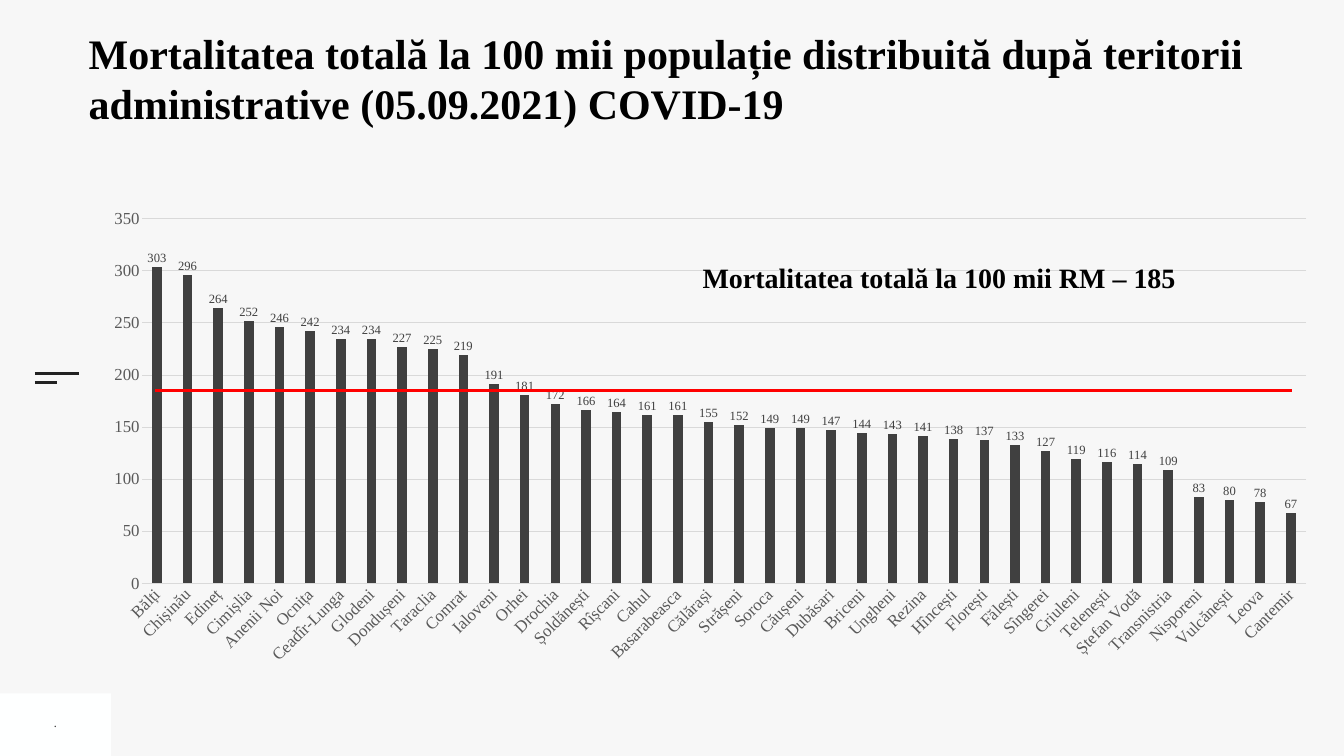
from dataclasses import dataclass

from lxml.etree import SubElement
from pptx import Presentation
from pptx.chart.data import CategoryChartData
from pptx.dml.color import RGBColor
from pptx.enum.chart import XL_CHART_TYPE, XL_LABEL_POSITION, XL_TICK_MARK
from pptx.enum.shapes import MSO_CONNECTOR, MSO_SHAPE
from pptx.enum.text import MSO_ANCHOR, MSO_AUTO_SIZE, PP_ALIGN
from pptx.oxml.ns import qn
from pptx.util import Inches, Pt


@dataclass(frozen=True)
class Theme:
    background: str = "F7F7F7"
    corner: str = "FEFFFF"
    ink: str = "222222"
    black: str = "000000"
    bar: str = "404040"
    axis: str = "595959"
    grid: str = "D9D9D9"
    average: str = "FF0000"
    serif: str = "Times New Roman"
    sans: str = "Open Sans"
    title_size: int = 60
    note_size: int = 40
    axis_size: int = 24
    label_size: int = 18
    mark_size: int = 16


THEME = Theme()

MORTALITY = {
    "Bălți": 303, "Chișinău": 296, "Edineț": 264, "Cimișlia": 252,
    "Anenii Noi": 246, "Ocnița": 242, "Ceadîr-Lunga": 234, "Glodeni": 234,
    "Dondușeni": 227, "Taraclia": 225, "Comrat": 219, "Ialoveni": 191,
    "Orhei": 181, "Drochia": 172, "Șoldănești": 166, "Rîșcani": 164,
    "Cahul": 161, "Basarabeasca": 161, "Călărași": 155, "Strășeni": 152,
    "Soroca": 149, "Căușeni": 149, "Dubăsari": 147, "Briceni": 144,
    "Ungheni": 143, "Rezina": 141, "Hîncești": 138, "Florești": 137,
    "Fălești": 133, "Sîngerei": 127, "Criuleni": 119, "Telenești": 116,
    "Ștefan Vodă": 114, "Transnistria": 109, "Nisporeni": 83,
    "Vulcănești": 80, "Leova": 78, "Cantemir": 67,
}


def set_attributes(target, **values):
    for name, value in values.items():
        setattr(target, name, value)


def format_font(font, size, color, name=THEME.serif, bold=False):
    set_attributes(font, size=Pt(size), name=name, bold=bold)
    font.color.rgb = RGBColor.from_string(color)


def format_line(line, color, width):
    line.color.rgb = RGBColor.from_string(color)
    line.width = Pt(width)


def add_rule(slide, left, top, width, color, weight):
    """Draw a horizontal line."""
    rule = slide.shapes.add_connector(
        MSO_CONNECTOR.STRAIGHT, Inches(left), Inches(top),
        Inches(left + width), Inches(top))
    format_line(rule.line, color, weight)
    SubElement(rule._element.spPr, qn("a:effectLst"))


def add_label(slide, box, text, **font):
    label = slide.shapes.add_textbox(*map(Inches, box))
    frame = label.text_frame
    set_attributes(frame, text=text, word_wrap=False,
                   vertical_anchor=MSO_ANCHOR.MIDDLE)
    paragraph = frame.paragraphs[0]
    paragraph.alignment = PP_ALIGN.CENTER
    format_font(paragraph.runs[0].font, **font)


def add_page_marks(slide, box):
    """Place the corner block and the two short side lines above it."""
    left, top, width, height = box
    corner = slide.shapes.add_shape(MSO_SHAPE.RECTANGLE, *map(Inches, box))
    corner.shadow.inherit = False
    corner.fill.solid()
    corner.fill.fore_color.rgb = RGBColor.from_string(THEME.corner)
    corner.line.fill.background()
    for rise, length in ((6.35, 0.88), (6.17, 0.44)):
        add_rule(slide, left + 0.69, top - rise, length, THEME.ink, 3)
    add_label(slide, (left + 0.97, top + 0.35, 0.26, 0.47), ".",
              size=THEME.mark_size, color=THEME.ink, name=THEME.sans)


def add_title(slide, box, text):
    title = slide.shapes.title
    left, top, width, height = map(Inches, box)
    set_attributes(title, left=left, top=top, width=width, height=height)
    frame = title.text_frame
    set_attributes(frame, text=text, word_wrap=True,
                   auto_size=MSO_AUTO_SIZE.NONE, vertical_anchor=MSO_ANCHOR.TOP)
    paragraph = frame.paragraphs[0]
    set_attributes(paragraph, alignment=PP_ALIGN.LEFT, line_spacing=1.0)
    format_font(paragraph.runs[0].font, THEME.title_size, THEME.black, bold=True)


def set_plot_layout(chart, x, y, w, h):
    """Fix the inner plot area, in fractions of the chart."""
    plot_area = chart._chartSpace.chart.plotArea
    for old in plot_area.findall(qn("c:layout")):
        plot_area.remove(old)
    layout = plot_area.makeelement(qn("c:layout"))
    plot_area.insert(0, layout)
    manual = SubElement(layout, qn("c:manualLayout"))
    settings = {"layoutTarget": "inner", "xMode": "edge", "yMode": "edge",
                "x": x, "y": y, "w": w, "h": h}
    for tag, value in settings.items():
        SubElement(manual, qn(f"c:{tag}")).set("val", str(value))


def format_axes(chart):
    for axis in (chart.category_axis, chart.value_axis):
        set_attributes(axis, major_tick_mark=XL_TICK_MARK.NONE,
                       minor_tick_mark=XL_TICK_MARK.NONE)
        format_font(axis.tick_labels.font, THEME.axis_size, THEME.axis)
    categories, values = chart.category_axis, chart.value_axis
    format_line(categories.format.line, THEME.grid, 0.75)
    body = categories._element.find(qn("c:txPr")).find(qn("a:bodyPr"))
    body.set("rot", "-2700000")
    set_attributes(values, minimum_scale=0, maximum_scale=350, major_unit=50)
    set_attributes(values.tick_labels, number_format="0",
                   number_format_is_linked=False)
    values.format.line.fill.background()
    format_line(values.major_gridlines.format.line, THEME.grid, 0.75)


def add_mortality_chart(slide, box):
    """Place the bars, the national average line and its caption."""
    left, top, width, height = box
    data = CategoryChartData(number_format="0")
    data.categories = list(MORTALITY)
    data.add_series("Series 1", list(MORTALITY.values()))
    chart = slide.shapes.add_chart(
        XL_CHART_TYPE.COLUMN_CLUSTERED, *map(Inches, box), data).chart
    set_attributes(chart, has_legend=False, has_title=False)
    format_font(chart.font, 28, THEME.black)
    set_plot_layout(chart, 0.047, 0.028, 0.944, 0.734)
    format_axes(chart)

    plot = chart.plots[0]
    set_attributes(plot, gap_width=219, overlap=-27, vary_by_categories=False,
                   has_data_labels=True)
    fill = plot.series[0].format.fill
    fill.solid()
    fill.fore_color.rgb = RGBColor.from_string(THEME.bar)
    labels = plot.data_labels
    set_attributes(labels, show_value=True, number_format="0",
                   number_format_is_linked=False,
                   position=XL_LABEL_POSITION.OUTSIDE_END)
    format_font(labels.font, THEME.label_size, THEME.bar)

    add_rule(slide, left + 1.42, top + 3.68, 22.55, THEME.average, 4.5)
    add_label(slide, (left + 12.13, top + 1.06, 9.69, 0.77),
              "Mortalitatea totală la 100 mii RM – 185",
              size=THEME.note_size, color=THEME.black, bold=True)


def main():
    presentation = Presentation()
    set_attributes(presentation, slide_width=Inches(26.67),
                   slide_height=Inches(15))
    slide = presentation.slides.add_slide(presentation.slide_layouts[5])
    background = slide.background.fill
    background.solid()
    background.fore_color.rgb = RGBColor.from_string(THEME.background)
    add_page_marks(slide, (0, 13.76, 2.2, 1.24))
    add_mortality_chart(slide, (1.66, 4.06, 24.48, 9.86))
    add_title(slide, (1.66, 0.49, 23.27, 2.12),
              "Mortalitatea totală la 100 mii populație distribuită după "
              "teritorii administrative (05.09.2021) COVID-19")
    presentation.save("out.pptx")


if __name__ == "__main__":
    main()
